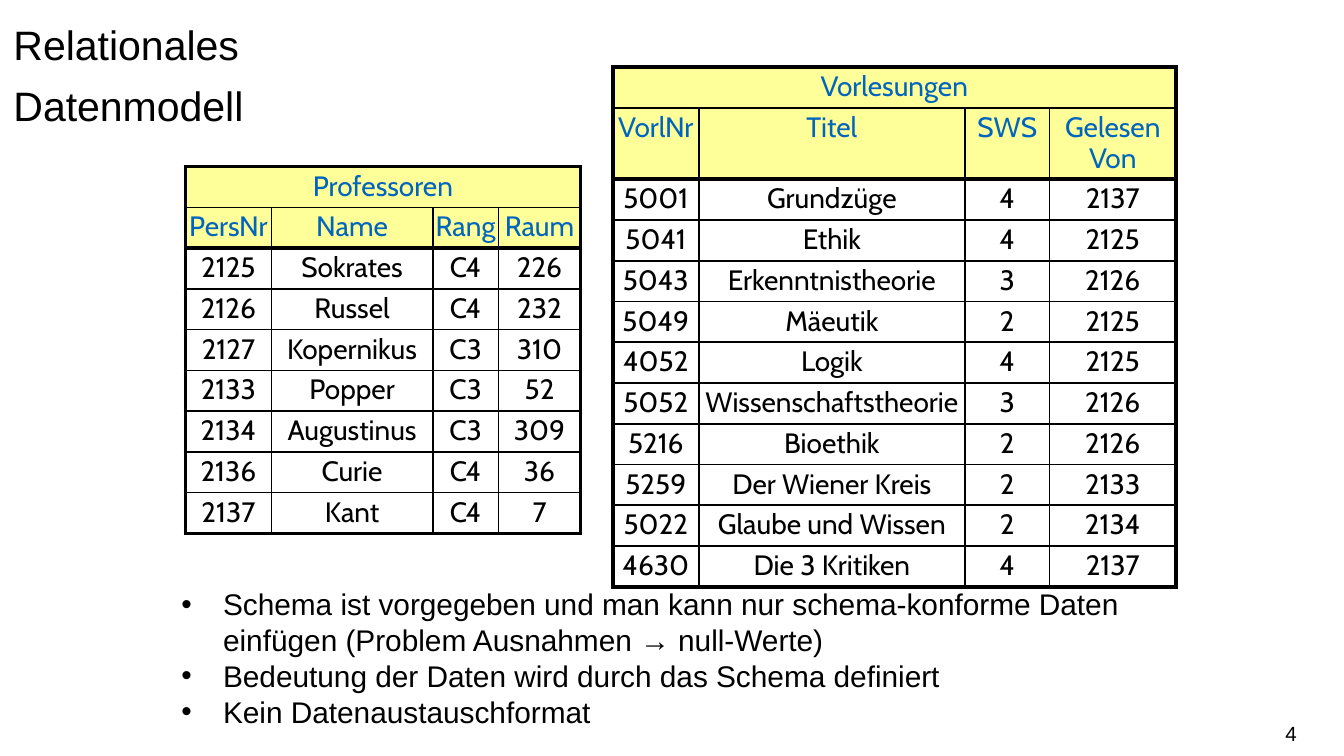
from dataclasses import dataclass

from lxml import etree
from pptx import Presentation
from pptx.dml.color import RGBColor
from pptx.enum.text import MSO_ANCHOR, MSO_AUTO_SIZE, PP_ALIGN
from pptx.oxml.ns import qn
from pptx.util import Inches, Pt

LEFT, CENTER, RIGHT = PP_ALIGN.LEFT, PP_ALIGN.CENTER, PP_ALIGN.RIGHT
TOP, MIDDLE = MSO_ANCHOR.TOP, MSO_ANCHOR.MIDDLE
NO_AUTOFIT = MSO_AUTO_SIZE.NONE

SLIDE_W = 10
SLIDE_H = SLIDE_W * 9 / 16
BLACK, BLUE, YELLOW = "000000", "0065BD", "FFFF99"
THIN, THICK = 1, 2.25
ROW_H = 0.3


@dataclass
class Relation:
    name: str
    left: float
    top: float
    col_widths: list[float]
    header_h: float
    header: list[str]
    rows: list[str]  # one tuple each, values separated by "|"


RELATIONS = [
    Relation(
        "Professoren", 1.38, 1.24, [0.64, 1.2, 0.49, 0.61], ROW_H,
        ["PersNr", "Name", "Rang", "Raum"],
        ["2125|Sokrates|C4|226", "2126|Russel|C4|232",
         "2127|Kopernikus|C3|310", "2133|Popper|C3|52",
         "2134|Augustinus|C3|309", "2136|Curie|C4|36", "2137|Kant|C4|7"],
    ),
    Relation(
        "Vorlesungen", 4.56, 0.5, [0.64, 1.98, 0.63, 0.94], 0.53,
        ["VorlNr", "Titel", "SWS", "Gelesen Von"],
        ["5001|Grundzüge|4|2137", "5041|Ethik|4|2125",
         "5043|Erkenntnistheorie|3|2126", "5049|Mäeutik|2|2125",
         "4052|Logik|4|2125", "5052|Wissenschaftstheorie|3|2126",
         "5216|Bioethik|2|2126", "5259|Der Wiener Kreis|2|2133",
         "5022|Glaube und Wissen|2|2134", "4630|Die 3 Kritiken|4|2137"],
    ),
]

BULLETS = [
    "Schema ist vorgegeben und man kann nur schema-konforme Daten "
    "einfügen (Problem Ausnahmen → null-Werte)",
    "Bedeutung der Daten wird durch das Schema definiert",
    "Kein Datenaustauschformat",
]


def rgb(color: str) -> RGBColor:
    return RGBColor.from_string(color)


def add_run(p, text: str, size: float, font: str = "Arial", color: str = BLACK) -> None:
    r = p.add_run()
    r.text = text
    r.font.size = Pt(size)
    r.font.name = font
    r.font.color.rgb = rgb(color)


def place(sp, left: float, top: float, width: float, height: float) -> None:
    sp.left, sp.top = Inches(left), Inches(top)
    sp.width, sp.height = Inches(width), Inches(height)


def set_frame(sp, anchor):
    tf = sp.text_frame
    tf.word_wrap = True
    tf.auto_size = NO_AUTOFIT
    tf.vertical_anchor = anchor
    return tf


def add_title(s) -> None:
    sp = s.shapes.title
    place(sp, 0, 0, SLIDE_W, SLIDE_H / 6)
    p = set_frame(sp, TOP).paragraphs[0]
    p.alignment = LEFT
    p.line_spacing = 1.25
    add_run(p, "Relationales ", 22)
    p.add_line_break()
    # the break needs its own size, or it takes the template's
    etree.SubElement(p._p.find(qn("a:br")), qn("a:rPr"), sz="2200")
    add_run(p, "Datenmodell", 22)


def add_bullets(s) -> None:
    sp = s.placeholders[1]
    place(sp, SLIDE_W / 8, 4.31, SLIDE_W * 3 / 4, SLIDE_H - 4.31)
    tf = set_frame(sp, TOP)
    for i, text in enumerate(BULLETS):
        p = tf.add_paragraph() if i else tf.paragraphs[0]
        p.space_before = Pt(0)
        pPr = p._p.get_or_add_pPr()
        pPr.set("marL", str(Inches(0.31)))
        pPr.set("indent", str(-Inches(0.31)))
        etree.SubElement(pPr, qn("a:buFont"), typeface="Arial")
        etree.SubElement(pPr, qn("a:buChar"), char="•")
        add_run(p, text, 16)


def set_borders(cell, left: float, right: float, top: float, bottom: float) -> None:
    tcPr = cell._tc.get_or_add_tcPr()
    for side, width in zip("LRTB", (left, right, top, bottom)):
        ln = etree.SubElement(tcPr, qn(f"a:ln{side}"), w=str(Pt(width)))
        fill = etree.SubElement(ln, qn("a:solidFill"))
        etree.SubElement(fill, qn("a:srgbClr"), val=BLACK)


def add_relation(s, rel: Relation) -> None:
    """Draw a table with a merged name row, a header row and the tuples."""
    grid = [[rel.name], rel.header] + [row.split("|") for row in rel.rows]
    heights = [ROW_H, rel.header_h] + [ROW_H] * len(rel.rows)
    n_cols, last_row = len(rel.col_widths), len(grid) - 1
    table = s.shapes.add_table(
        len(grid), n_cols, Inches(rel.left), Inches(rel.top),
        Inches(sum(rel.col_widths)), Inches(sum(heights))).table
    table.first_row = table.horz_banding = False
    for col, width in zip(table.columns, rel.col_widths):
        col.width = Inches(width)
    for row, height in zip(table.rows, heights):
        row.height = Inches(height)
    table.cell(0, 0).merge(table.cell(0, n_cols - 1))

    for i, values in enumerate(grid):
        is_head = i < 2
        for j, value in enumerate(values):
            cell = table.cell(i, j)
            cell.margin_left = cell.margin_right = 0
            cell.margin_top = cell.margin_bottom = Pt(2.7)
            set_borders(
                cell,
                left=THICK if j == 0 else THIN,
                right=THICK if j == len(values) - 1 else THIN,
                top=THICK if i in (0, 2) else THIN,
                bottom=THICK if i in (1, last_row) else THIN)
            if is_head:
                cell.fill.solid()
                cell.fill.fore_color.rgb = rgb(YELLOW)
            else:
                cell.fill.background()
            p = cell.text_frame.paragraphs[0]
            p.alignment = CENTER
            p.line_spacing = 0.9
            add_run(p, value, 15, "Cabin", BLUE if is_head else BLACK)


def add_page_number(s, number: str) -> None:
    sp = s.shapes.add_textbox(Inches(7.41), Inches(5.31), Inches(2.24), Inches(0.3))
    tf = set_frame(sp, MIDDLE)
    tf.margin_left = tf.margin_right = 0
    p = tf.paragraphs[0]
    p.alignment = RIGHT
    add_run(p, number, 11)


def main() -> None:
    prs = Presentation()
    prs.slide_width, prs.slide_height = Inches(SLIDE_W), Inches(SLIDE_H)
    s = prs.slides.add_slide(prs.slide_layouts[1])
    add_title(s)
    add_bullets(s)
    for rel in RELATIONS:
        add_relation(s, rel)
    add_page_number(s, "4")
    prs.save("out.pptx")


if __name__ == "__main__":
    main()
